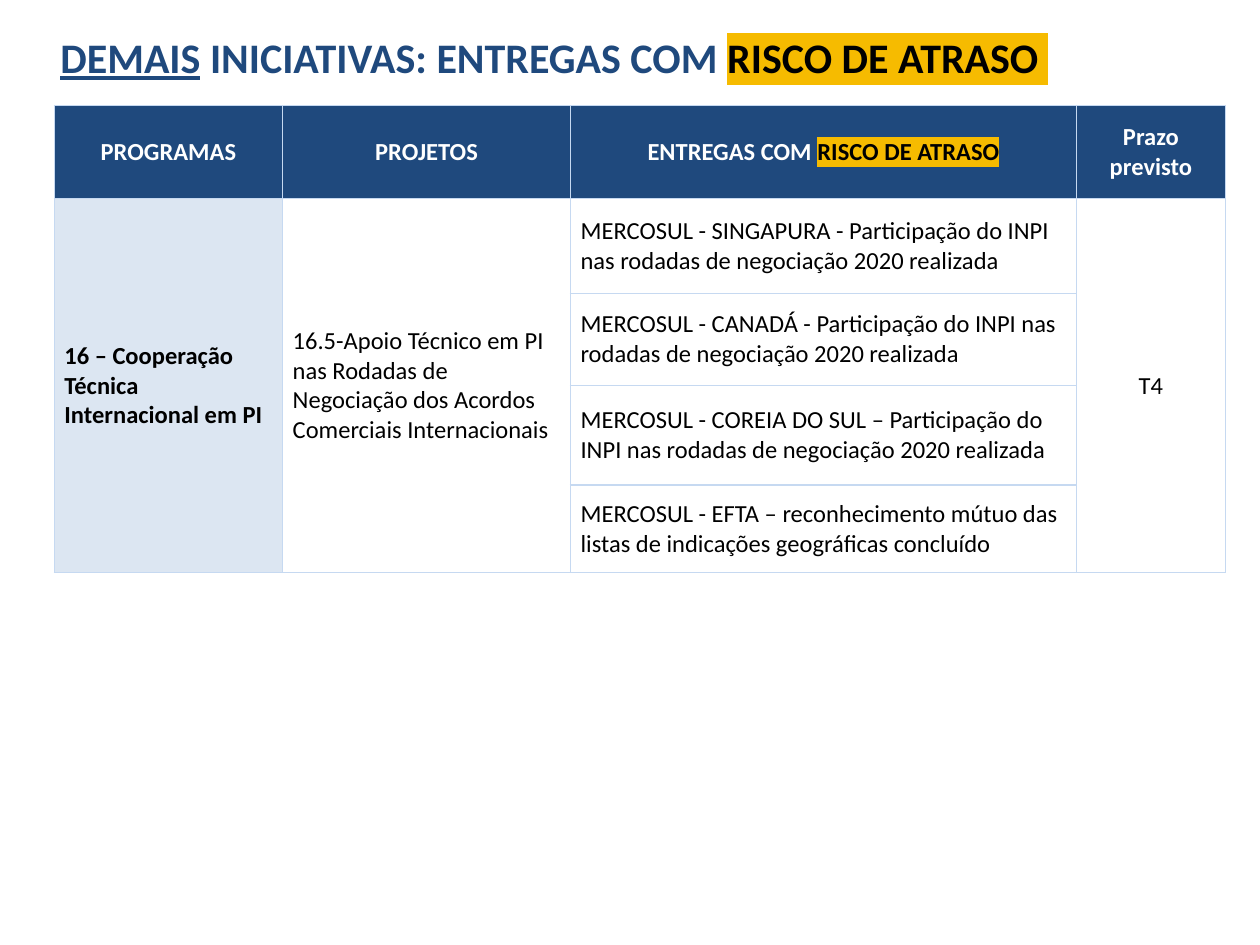
"""Build the slide listing deliverables at risk of delay."""
from dataclasses import dataclass

import lxml.etree
import pptx
import pptx.dml.color
import pptx.enum.text
import pptx.oxml.ns
import pptx.util

Pt = pptx.util.Pt
Align = pptx.enum.text.PP_ALIGN
Anchor = pptx.enum.text.MSO_ANCHOR


@dataclass(frozen=True)
class Theme:
    font: str = "Calibri"
    title_size: float = 24
    table_size: float = 14
    navy: str = "1F497D"
    white: str = "FFFFFF"
    black: str = "000000"
    pale: str = "DCE6F2"
    border: str = "C6D9F1"
    risk: str = "F6BB00"
    border_width: float = 1
    cell_inset: float = 5.8


@dataclass(frozen=True)
class Span:
    text: str
    color: str
    highlight: str = ""
    underline: bool = False


@dataclass(frozen=True)
class Entry:
    row: int
    column: int
    spans: tuple[Span, ...]
    fill: str
    bold: bool = False
    align: Align = Align.LEFT
    row_span: int = 1


THEME = Theme()
COLUMN_WIDTHS = (130.5, 164.5, 289.2, 85)
ROW_HEIGHTS = (53.2, 54.2, 52.6, 57, 50)
TITLE = (
    Span("DEMAIS", THEME.navy, underline=True),
    Span(" INICIATIVAS: ENTREGAS COM ", THEME.navy),
    Span("RISCO DE ATRASO ", THEME.black, THEME.risk),
)
HEADERS = (
    (Span("PROGRAMAS", THEME.white),),
    (Span("PROJETOS", THEME.white),),
    (Span("ENTREGAS COM ", THEME.white), Span("RISCO DE ATRASO", THEME.black, THEME.risk)),
    (Span("Prazo previsto", THEME.white),),
)
PROGRAM = "16 – Cooperação Técnica Internacional em PI"
PROJECT = "16.5-Apoio Técnico em PI nas Rodadas de Negociação dos Acordos Comerciais Internacionais"
DEADLINE = "T4"
DELIVERABLES = (
    "MERCOSUL - SINGAPURA - Participação do INPI nas rodadas de negociação 2020 realizada",
    "MERCOSUL - CANADÁ - Participação do INPI nas rodadas de negociação 2020 realizada",
    "MERCOSUL - COREIA DO SUL – Participação do INPI nas rodadas de negociação 2020 realizada",
    "MERCOSUL - EFTA – reconhecimento mútuo das listas de indicações geográficas concluído",
)


def rgb(color: str) -> pptx.dml.color.RGBColor:
    """Turn a hex string into a colour."""
    return pptx.dml.color.RGBColor.from_string(color)


def add_solid_color(parent: lxml.etree._Element, tag: str, color: str) -> lxml.etree._Element:
    """Append an element holding a plain colour."""
    holder = lxml.etree.SubElement(parent, pptx.oxml.ns.qn(tag))
    lxml.etree.SubElement(holder, pptx.oxml.ns.qn("a:srgbClr"), val=color)
    return holder


def write_spans(paragraph, spans: tuple[Span, ...], size: float, bold: bool, align: Align) -> None:
    """Fill a paragraph, with run formatting only where runs differ."""
    paragraph.alignment = align
    paragraph.font.name = THEME.font
    paragraph.font.size = Pt(size)
    paragraph.font.bold = bold
    uniform = len({span.color for span in spans}) == 1
    if uniform:
        paragraph.font.color.rgb = rgb(spans[0].color)
    for span in spans:
        run = paragraph.add_run()
        run.text = span.text
        if not uniform:
            run.font.color.rgb = rgb(span.color)
        if span.underline:
            run.font.underline = True
        if span.highlight:
            add_solid_color(run.font._element, "a:highlight", span.highlight)


def add_title(slide) -> None:
    """Place and fill the title placeholder."""
    title = slide.shapes.title
    title.left, title.top, title.width, title.height = Pt(28), Pt(15), Pt(683), Pt(36)
    frame = title.text_frame
    frame.word_wrap = True
    frame.auto_size = pptx.enum.text.MSO_AUTO_SIZE.NONE
    frame.vertical_anchor = Anchor.TOP
    frame.margin_left = frame.margin_right = Pt(6.5)
    frame.margin_top = frame.margin_bottom = Pt(3)
    write_spans(frame.paragraphs[0], TITLE, THEME.title_size, True, Align.LEFT)


def style_cell(cell, fill: str) -> None:
    """Give a cell its borders, fill, insets and anchor."""
    properties = cell._tc.get_or_add_tcPr()
    for side in ("a:lnL", "a:lnR", "a:lnT", "a:lnB"):
        line = lxml.etree.SubElement(
            properties, pptx.oxml.ns.qn(side), w=str(Pt(THEME.border_width))
        )
        add_solid_color(line, "a:solidFill", THEME.border)
    cell.fill.solid()
    cell.fill.fore_color.rgb = rgb(fill)
    cell.margin_left = cell.margin_right = Pt(THEME.cell_inset)
    cell.margin_top = cell.margin_bottom = Pt(THEME.cell_inset)
    cell.vertical_anchor = Anchor.MIDDLE


def table_entries() -> list[Entry]:
    """List the cells that hold text."""
    count = len(DELIVERABLES)

    def body(row: int, column: int, text: str, fill: str = THEME.white, **options) -> Entry:
        """Describe a black-text cell."""
        return Entry(row, column, (Span(text, THEME.black),), fill, **options)

    return [
        *(Entry(0, column, spans, THEME.navy, True, Align.CENTER)
          for column, spans in enumerate(HEADERS)),
        body(1, 0, PROGRAM, THEME.pale, bold=True, row_span=count),
        body(1, 1, PROJECT, row_span=count),
        *(body(row, 2, text) for row, text in enumerate(DELIVERABLES, start=1)),
        body(1, 3, DEADLINE, align=Align.CENTER, row_span=count),
    ]


def add_deliverables_table(slide) -> None:
    """Draw the table of deliverables."""
    table = slide.shapes.add_table(
        len(ROW_HEIGHTS), len(COLUMN_WIDTHS), Pt(31), Pt(60.3),
        Pt(sum(COLUMN_WIDTHS)), Pt(sum(ROW_HEIGHTS)),
    ).table
    table.first_row = table.horz_banding = False
    for column, width in zip(table.columns, COLUMN_WIDTHS):
        column.width = Pt(width)
    for row, height in zip(table.rows, ROW_HEIGHTS):
        row.height = Pt(height)
    for entry in table_entries():
        cell = table.cell(entry.row, entry.column)
        last_row = entry.row + entry.row_span
        for row in range(entry.row, last_row):
            style_cell(table.cell(row, entry.column), entry.fill)
        if entry.row_span > 1:
            cell.merge(table.cell(last_row - 1, entry.column))
        write_spans(cell.text_frame.paragraphs[0], entry.spans,
                    THEME.table_size, entry.bold, entry.align)


def main() -> None:
    """Build and save the presentation."""
    presentation = pptx.Presentation()
    presentation.slide_width, presentation.slide_height = Pt(720), Pt(540)
    slide = presentation.slides.add_slide(presentation.slide_layouts.get_by_name("Title Only"))
    add_deliverables_table(slide)
    add_title(slide)
    presentation.save("out.pptx")


if __name__ == "__main__":
    main()
